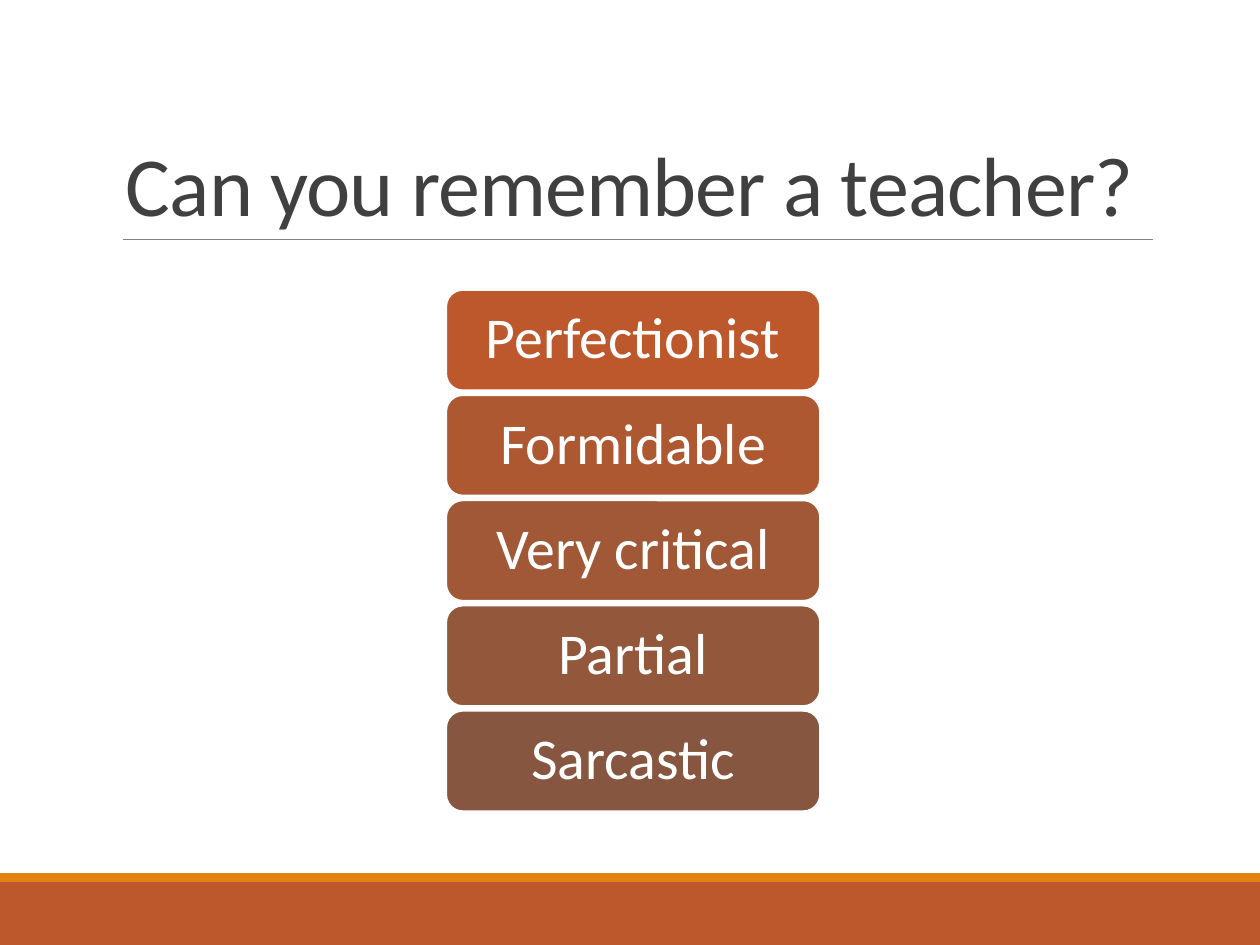
"""Build a slide listing five traits of a remembered teacher."""
import dataclasses

import pptx
import pptx.dml.color
import pptx.enum.shapes
import pptx.enum.text
import pptx.oxml.ns
import pptx.oxml.xmlchemy
import pptx.util
from lxml import etree

WIDTH, HEIGHT = 10, 7.5
FONT = "Calibri"
COLOURS = {
    "rust": "BD582C",
    "orange": "E48312",
    "rule": "808080",
    "title": "404040",
    "white": "FFFFFF",
}
TRAIT_LEFT, TRAIT_TOP = 3.54, 2.3
TRAIT_WIDTH, TRAIT_HEIGHT, TRAIT_PITCH = 2.97, 0.8, 0.835


@dataclasses.dataclass(frozen=True)
class Area:
    left: float
    top: float
    width: float
    height: float

    def lengths(self) -> list:
        return [pptx.util.Inches(n) for n in dataclasses.astuple(self)]


@dataclasses.dataclass(frozen=True)
class Trait:
    word: str
    fill: str


TRAITS = [
    Trait("Perfectionist", "BD582C"),
    Trait("Formidable", "AE5832"),
    Trait("Very critical", "A05837"),
    Trait("Partial", "93573C"),
    Trait("Sarcastic", "865640"),
]


def rgb(value: str) -> pptx.dml.color.RGBColor:
    return pptx.dml.color.RGBColor.from_string(value)


def write(holder, text: str, *, size: float, colour: str, align: str, anchor: str,
          line_spacing: float, insets: tuple, tracking: float = 0) -> None:
    frame = holder.text_frame
    frame.word_wrap = True
    frame.vertical_anchor = pptx.enum.text.MSO_ANCHOR[anchor]
    frame.margin_left = frame.margin_right = pptx.util.Inches(insets[0])
    frame.margin_top = frame.margin_bottom = pptx.util.Inches(insets[1])
    paragraph = frame.paragraphs[0]
    paragraph.alignment = pptx.enum.text.PP_ALIGN[align]
    paragraph.line_spacing = line_spacing
    run = paragraph.add_run()
    run.text = text
    run.font.name = FONT
    run.font.size = pptx.util.Pt(size)
    run.font.color.rgb = rgb(colour)
    if tracking:
        run.font._element.set("spc", str(round(tracking * 100)))


def add_block(slide, kind: str, area: Area, fill: str, outline: str | None = None):
    block = slide.shapes.add_shape(pptx.enum.shapes.MSO_SHAPE[kind], *area.lengths())
    block.shadow.inherit = False
    block.fill.solid()
    block.fill.fore_color.rgb = rgb(fill)
    if outline:
        block.line.color.rgb = rgb(outline)
        block.line.width = pptx.util.Pt(1.25)
    else:
        block.line.fill.background()
    return block


def add_rule(slide, left: float, right: float, top: float) -> None:
    ends = [pptx.util.Inches(n) for n in (left, top, right, top)]
    rule = slide.shapes.add_connector(pptx.enum.shapes.MSO_CONNECTOR.STRAIGHT, *ends)
    rule.line.color.rgb = rgb(COLOURS["rule"])
    rule.line.width = pptx.util.Pt(0.5)
    etree.SubElement(rule._element.spPr, pptx.oxml.ns.qn("a:effectLst"))


def add_trait(slide, row: int, trait: Trait) -> None:
    area = Area(TRAIT_LEFT, TRAIT_TOP + row * TRAIT_PITCH, TRAIT_WIDTH, TRAIT_HEIGHT)
    block = add_block(slide, "ROUNDED_RECTANGLE", area, trait.fill, COLOURS["white"])
    write(block, trait.word, size=33, colour=COLOURS["white"], align="CENTER",
          anchor="MIDDLE", line_spacing=0.9, insets=(0.14, 0.07))


def main() -> None:
    deck = pptx.Presentation()
    deck.slide_width = pptx.util.Inches(WIDTH)
    deck.slide_height = pptx.util.Inches(HEIGHT)
    slide = deck.slides.add_slide(deck.slide_layouts[6])

    add_block(slide, "RECTANGLE", Area(0, HEIGHT - 0.5, WIDTH, 0.5), COLOURS["rust"])
    add_block(slide, "RECTANGLE", Area(0, HEIGHT - 0.57, WIDTH, 0.07), COLOURS["orange"])
    add_rule(slide, 0.98, 9.15, 1.9)

    title = slide.shapes.add_textbox(*Area(0.9, 0.31, 8.25, 1.59).lengths())
    write(title, "Can you remember a teacher?", size=48, colour=COLOURS["title"],
          align="LEFT", anchor="BOTTOM", line_spacing=0.85, insets=(0.1, 0.05),
          tracking=-0.5)

    for row, trait in enumerate(TRAITS):
        add_trait(slide, row, trait)

    deck.save("out.pptx")


if __name__ == "__main__":
    main()
